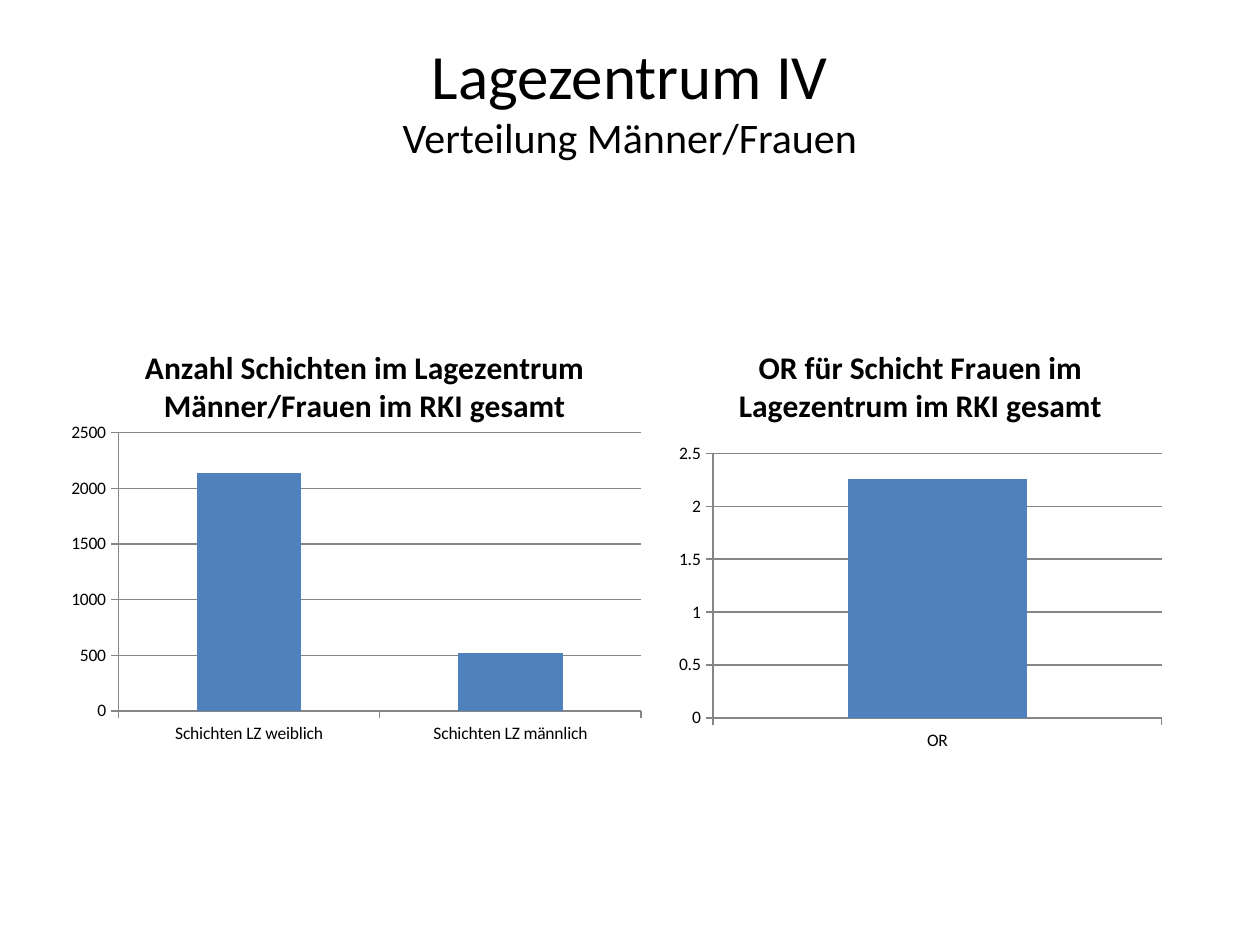
from lxml.etree import SubElement
from pptx import Presentation
from pptx.chart.data import CategoryChartData as Data
from pptx.dml.color import RGBColor as RGB
from pptx.enum.chart import XL_CHART_TYPE as Kind, XL_TICK_MARK as Tick
from pptx.enum.text import MSO_ANCHOR as Anchor, PP_ALIGN as Align
from pptx.oxml.ns import qn
from pptx.util import Inches, Pt

WIDE, HIGH = Inches(10), Inches(7.5)
HUES = {"text": "000000", "bar": "4F81BD", "line": "868686"}
FACE = "Calibri"


def shares(left, top, width, height):
    """Turn shares of the slide's size into lengths."""
    return [int(part * full) for part, full in
            zip((left, top, width, height), (WIDE, HIGH, WIDE, HIGH))]


def style(font, size, bold=False):
    form = {"name": FACE, "size": Pt(size), "bold": bold}
    for key, val in form.items():
        setattr(font, key, val)
    font.color.rgb = RGB.from_string(HUES["text"])


def add_head(slide, box, lines):
    """Add one centred paragraph of (text, size) lines."""
    frame = slide.shapes.add_textbox(*shares(*box)).text_frame
    form = {"word_wrap": True, "vertical_anchor": Anchor.MIDDLE}
    for key, val in form.items():
        setattr(frame, key, val)
    para = frame.paragraphs[0]
    para.alignment = Align.CENTER
    for row, (text, size) in enumerate(lines):
        if row:
            para.add_line_break()
        run = para.add_run()
        run.text = text
        style(run.font, size)


def set_line(form):
    form.line.color.rgb = RGB.from_string(HUES["line"])
    form.line.width = Pt(0.75)


def set_plot(chart, spot):
    """Fix the inner plot area at shares of the chart's size."""
    area = chart.plots[0]._element.getparent()
    lay = area.find(qn("c:layout"))
    if lay is None:
        lay = SubElement(area, qn("c:layout"))
        area.insert(0, lay)
    man = SubElement(lay, qn("c:manualLayout"))
    rules = [("layoutTarget", "inner"), ("xMode", "edge"), ("yMode", "edge")]
    for tag, val in rules + list(zip("xywh", spot)):
        SubElement(man, qn(f"c:{tag}")).set("val", str(val))


def add_bars(slide, box, title, cats, vals, spot=None):
    data = Data()
    data.categories = cats
    data.add_series("Series 1", vals)
    chart = slide.shapes.add_chart(
        Kind.COLUMN_CLUSTERED, *shares(*box), data).chart
    style(chart.font, 10)
    chart.has_legend = False
    chart.has_title = True
    frame = chart.chart_title.text_frame
    frame.text = title
    style(frame.paragraphs[0].runs[0].font, 18, True)
    chart.chart_title.include_in_layout = False

    plot = chart.plots[0]
    plot.gap_width, plot.vary_by_categories = 150, False
    fill = plot.series[0].format.fill
    fill.solid()
    fill.fore_color.rgb = RGB.from_string(HUES["bar"])
    for axis in (chart.category_axis, chart.value_axis):
        axis.major_tick_mark = Tick.OUTSIDE
        axis.minor_tick_mark = Tick.NONE
        set_line(axis.format)
    chart.value_axis.has_major_gridlines = True
    set_line(chart.value_axis.major_gridlines.format)
    if spot:
        set_plot(chart, spot)


def main():
    deck = Presentation()
    deck.slide_width, deck.slide_height = WIDE, HIGH
    slide = deck.slides.add_slide(deck.slide_layouts[6])
    add_head(slide, (0.05, 0, 0.9, 0.21),
             [("Lagezentrum IV", 36), ("Verteilung Männer/Frauen", 24)])
    top, tall = 0.343, 0.46
    add_bars(slide, (0.531, top, 0.399, tall),
             "OR für Schicht Frauen im Lagezentrum im RKI gesamt",
             ["OR"], [2.26])
    add_bars(slide, (0.051, top, 0.477, tall),
             "Anzahl Schichten im Lagezentrum Männer/Frauen im RKI gesamt",
             ["Schichten LZ weiblich", "Schichten LZ männlich"], [2140, 520],
             (0.09, 0.25, 0.87, 0.64))
    deck.save("out.pptx")


if __name__ == "__main__":
    main()
